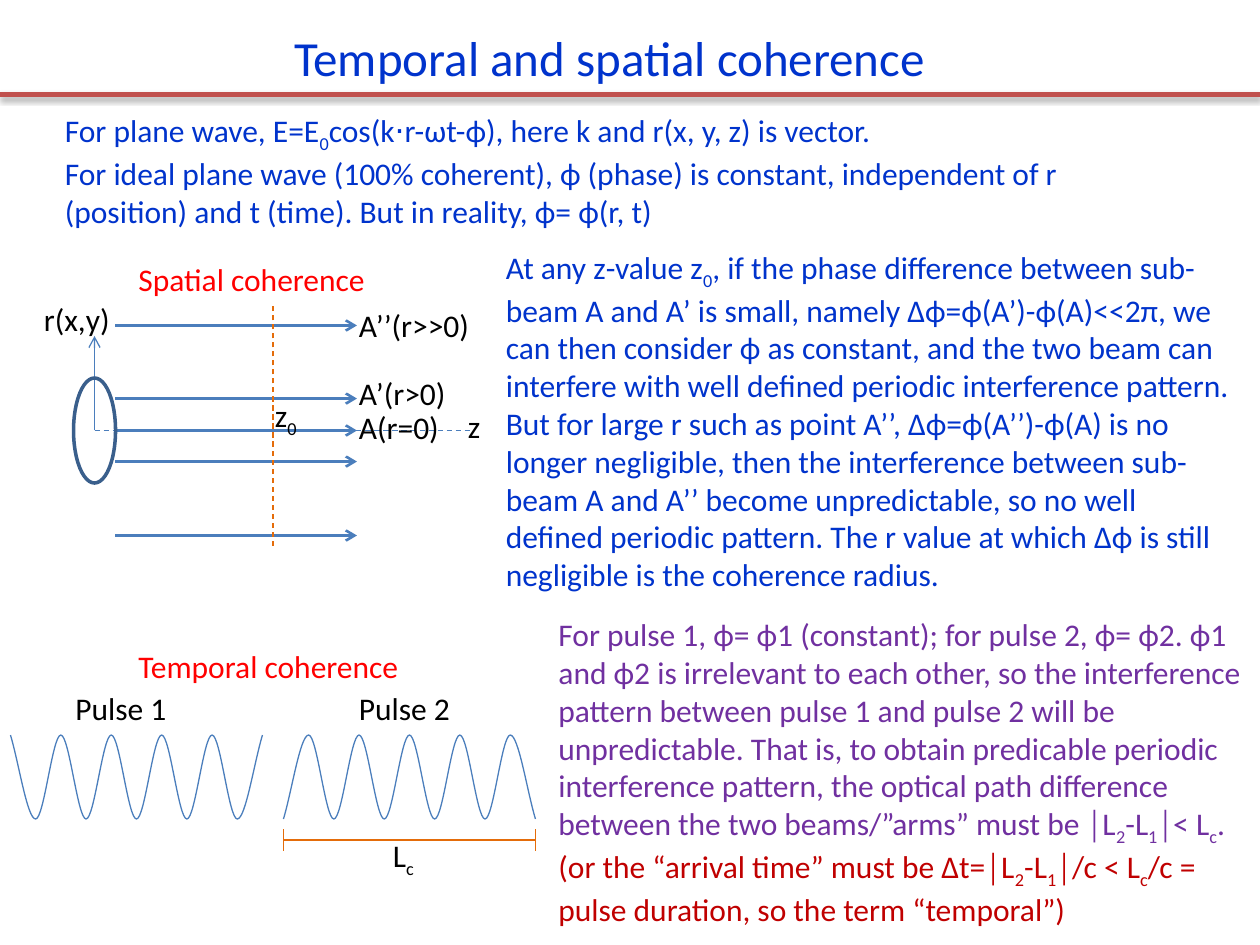
import math
from dataclasses import dataclass

from lxml import etree
from pptx import Presentation
from pptx.dml.color import RGBColor
from pptx.enum.dml import MSO_LINE
from pptx.enum.shapes import MSO_CONNECTOR, MSO_SHAPE
from pptx.enum.text import MSO_AUTO_SIZE
from pptx.oxml.ns import qn
from pptx.util import Pt

STRAIGHT = MSO_CONNECTOR.STRAIGHT
ELLIPSE = MSO_SHAPE.OVAL
DASH = MSO_LINE.DASH
GROW = MSO_AUTO_SIZE.SHAPE_TO_FIT_TEXT


@dataclass(frozen=True)
class Theme:
    font: str = "Calibri"
    title_size: int = 28
    body_size: int = 18
    blue: str = "0033CC"
    red: str = "FF0000"
    purple: str = "7030A0"
    dark_red: str = "C00000"
    black: str = "000000"
    rule: str = "C0504D"
    ray: str = "4B7EBC"
    lens: str = "3A5F8C"
    orange: str = "E46C0A"


T = Theme()


def add_runs(p, text, color, size):
    """Add text to a paragraph; parts between ~ marks become subscripts."""
    for i, part in enumerate(text.split("~")):
        if not part:
            continue
        r = p.add_run()
        r.text = part
        r.font.name = T.font
        r.font.size = Pt(size)
        r.font.color.rgb = RGBColor.from_string(color)
        if i % 2:
            r._r.get_or_add_rPr().set("baseline", "-25000")


def add_text(s, text, x, y, w, h, color=T.black, size=T.body_size,
             wrap=False, line_spacing=None):
    """Add a text box with one paragraph per line of text."""
    sp = s.shapes.add_textbox(Pt(x), Pt(y), Pt(w), Pt(h))
    tf = sp.text_frame
    tf.word_wrap = wrap
    tf.auto_size = GROW
    for i, line in enumerate(text.split("\n")):
        p = tf.add_paragraph() if i else tf.paragraphs[0]
        p.line_spacing = line_spacing
        add_runs(p, line, color, size)
    return tf


def add_line(s, x1, y1, x2, y2, color=T.ray, width=0.75, dash=None,
             arrow=False, shadow=False):
    c = s.shapes.add_connector(STRAIGHT, Pt(x1), Pt(y1), Pt(x2), Pt(y2))
    c.line.color.rgb = RGBColor.from_string(color)
    c.line.width = Pt(width)
    if dash:
        c.line.dash_style = dash
    if arrow:
        etree.SubElement(c.line._get_or_add_ln(), qn("a:tailEnd"), type="arrow")
    effects = etree.SubElement(c._element.spPr, qn("a:effectLst"))
    if shadow:
        outer = etree.SubElement(effects, qn("a:outerShdw"), blurRad=str(Pt(3.1)),
                                 dist=str(Pt(1.6)), dir="5400000", rotWithShape="0")
        black = etree.SubElement(outer, qn("a:srgbClr"), val=T.black)
        etree.SubElement(black, qn("a:alpha"), val="38000")


def style_outline(sp, color, width):
    sp.shadow.inherit = False
    sp.fill.background()
    sp.line.color.rgb = RGBColor.from_string(color)
    sp.line.width = Pt(width)


def round_turns(sp):
    """Turn the straight segments into curves that are level at each inner turn."""
    points = [(int(pt.get("x")), int(pt.get("y"))) for pt in sp._element.iter(qn("a:pt"))]
    segments = list(sp._element.iter(qn("a:lnTo")))
    last = len(segments) - 1
    for i, segment in enumerate(segments):
        (x0, y0), (x1, y1) = points[i], points[i + 1]
        dx, dy = (x1 - x0) / 3, (y1 - y0) / 3
        controls = [(x0 + dx, y0 + (dy if i == 0 else 0)),
                    (x1 - dx, y1 - (dy if i == last else 0))]
        segment.tag = qn("a:cubicBezTo")
        for k, (x, y) in enumerate(controls):
            pt = etree.Element(qn("a:pt"), x=str(round(x)), y=str(round(y)))
            segment.insert(k, pt)


def add_wave(s, x, y, w, h, phase, cycles=5):
    """Draw a wave in the given box; phase 0 starts at a crest, pi at a trough."""
    turns = 2 * cycles
    points = [(Pt(x + w * i / turns),
               Pt(y + h * (1 - math.cos(math.pi * i + phase)) / 2))
              for i in range(turns + 1)]
    fb = s.shapes.build_freeform(*points[0])
    fb.add_line_segments(points[1:], close=False)
    sp = fb.convert_to_shape()
    round_turns(sp)
    style_outline(sp, T.ray, 0.75)


def add_spatial_diagram(s):
    axis_y, axis_x, plane_x = 246, 54, 156
    for y in (186, 227.75, axis_y, 263.75, 306):
        add_line(s, 66, y, 204, y, width=1.5, arrow=True)
    add_line(s, axis_x, axis_y, 270, axis_y, dash=DASH)
    add_line(s, axis_x, axis_y, axis_x, 192, arrow=True)
    add_line(s, plane_x, 312, plane_x, 174, color=T.orange, dash=DASH)
    lens = s.shapes.add_shape(ELLIPSE, Pt(42), Pt(216), Pt(24), Pt(60))
    style_outline(lens, T.lens, 2)

    add_text(s, "Spatial coherence", 72, 145, 145.5, 29, color=T.red)
    add_text(s, "r(x,y)", 18, 168, 52.5, 29)
    add_text(s, "z", 260.25, 229, 21.5, 29)
    add_text(s, "z~0~", 150, 223, 28, 29)
    tf = add_text(s, "A’’(r>>0)\nA’(r>0)\nA(r=0)", 198, 174, 78.5, 86,
                  line_spacing=0.9)
    tf.paragraphs[1].space_before = Pt(19)


def add_temporal_diagram(s):
    top, height, length = 420, 48, 144
    first, second, scale_y = 6, 162, 480
    add_text(s, "Temporal coherence", 72, 366, 165, 29, color=T.red)
    add_text(s, "Pulse 1", 36, 390, 67, 29)
    add_text(s, "Pulse 2", 198, 390, 67, 29)
    add_wave(s, first, top, length, height, phase=0)
    add_wave(s, second, top, length, height, phase=math.pi)

    end = second + length
    add_line(s, second, scale_y, end, scale_y, color=T.orange, width=1.5)
    for x in (second, end):
        add_line(s, x, scale_y + 6, x, scale_y - 6, color=T.orange)
    add_text(s, "L~c~", 217.5, 474, 27.5, 29)


def add_explanations(s):
    add_text(s, "For plane wave, E=E~0~cos(k⋅r-ωt-ϕ), here k and r(x, y, z) is vector.\n"
             "For ideal plane wave (100% coherent), ϕ (phase) is constant, "
             "independent of r (position) and t (time). But in reality, ϕ= ϕ(r, t)",
             30, 60, 648, 72.5, color=T.blue, wrap=True)
    add_text(s, "At any z-value z~0~, if the phase difference between sub-beam A "
             "and A’ is small, namely Δϕ=ϕ(A’)-ϕ(A)<<2π, we can then consider ϕ "
             "as constant, and the two beam can interfere with well defined "
             "periodic interference pattern. But for large r such as point A’’, "
             "Δϕ=ϕ(A’’)-ϕ(A) is no longer negligible, then the interference "
             "between sub-beam A and A’’ become unpredictable, so no well defined "
             "periodic pattern. The r value at which Δϕ is still negligible is "
             "the coherence radius.",
             282, 138, 432, 204, color=T.blue, wrap=True)
    tf = add_text(s, "For pulse 1, ϕ= ϕ1 (constant); for pulse 2, ϕ= ϕ2. ϕ1 and ϕ2 "
                  "is irrelevant to each other, so the interference pattern "
                  "between pulse 1 and pulse 2 will be unpredictable. That is, to "
                  "obtain predicable periodic interference pattern, the optical "
                  "path difference between the two beams/”arms” must be "
                  "│L~2~-L~1~│< L~c~. ",
                  312, 348, 408, 181.5, color=T.purple, wrap=True)
    add_runs(tf.paragraphs[0], "(or the “arrival time” must be Δt=│L~2~-L~1~│/c < "
             "L~c~/c = pulse duration, so the term “temporal”)",
             T.dark_red, T.body_size)


def main():
    prs = Presentation()
    prs.slide_width, prs.slide_height = Pt(720), Pt(540)
    s = prs.slides.add_slide(prs.slide_layouts[6])
    add_line(s, 0, 54, 720, 54, color=T.rule, width=3, shadow=True)
    add_text(s, "Temporal and spatial coherence", 161, 12, 379, 41,
             color=T.blue, size=T.title_size)
    add_spatial_diagram(s)
    add_temporal_diagram(s)
    add_explanations(s)
    prs.save("out.pptx")


if __name__ == "__main__":
    main()
